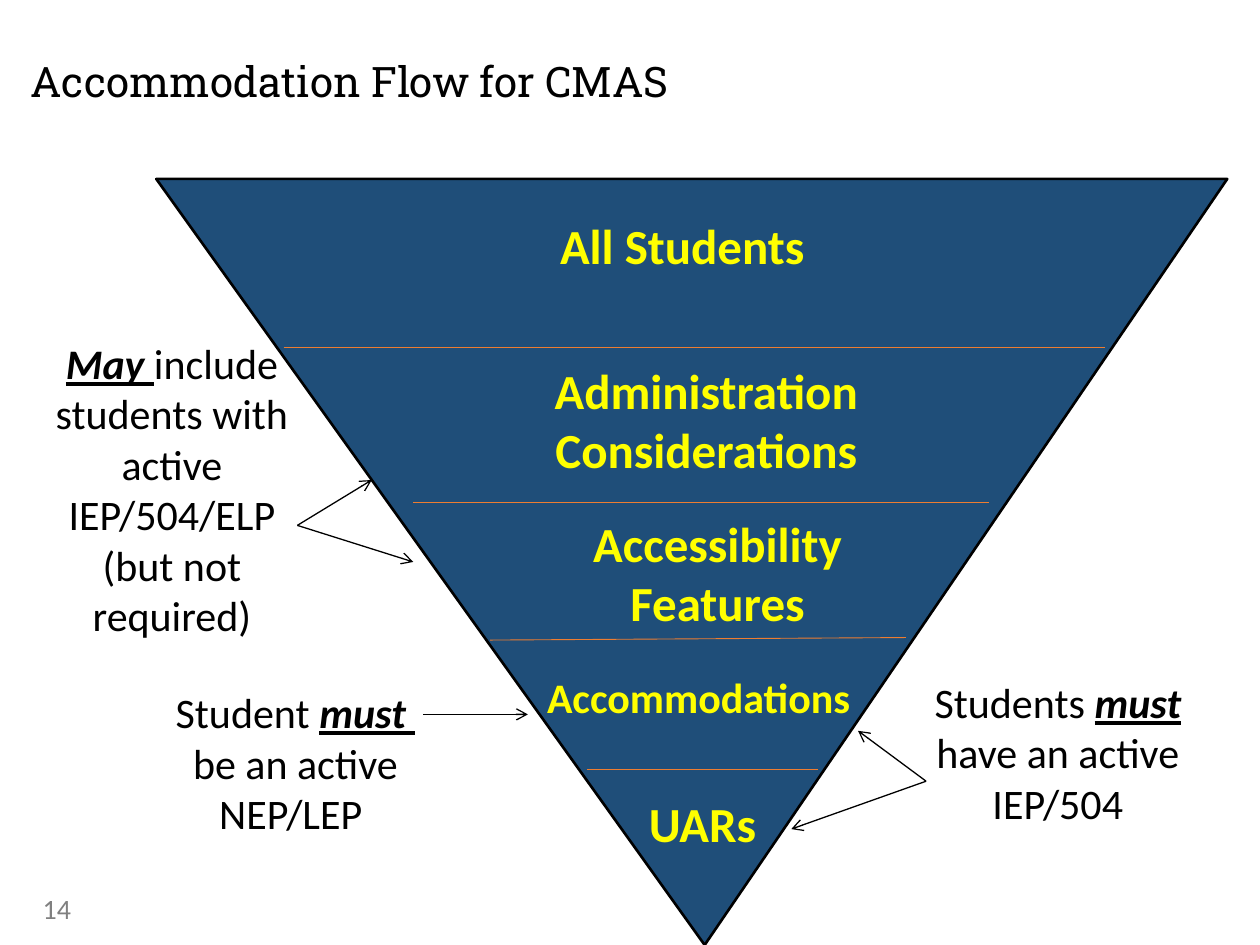
"""Build the slide on accommodation flow as an inverted triangle."""
from lxml.etree import SubElement
from pptx import Presentation
from pptx.dml.color import RGBColor as RGB
from pptx.enum.shapes import MSO_CONNECTOR as Link, MSO_SHAPE as Shape
from pptx.enum.text import MSO_ANCHOR as Anchor, PP_ALIGN as Align
from pptx.oxml.ns import qn
from pptx.util import Inches, Pt

HUES = {"ink": "000000", "navy": "1F4E79", "gold": "FFFF00",
        "rule": "ED7D31", "gray": "808080"}


def write(frame, runs, size, hue, align=Align.CENTER, font="Calibri", bold=None):
    para = frame.paragraphs[0]
    para.alignment = align
    for text, strong in runs:
        run = para.add_run()
        run.text = text
        run.font.name = font
        run.font.size = Pt(size)
        run.font.color.rgb = RGB.from_string(HUES[hue])
        run.font.bold = strong or bold
        if strong:
            run.font.italic = run.font.underline = True
    return para


def draw(start, end, hue, width):
    line = slide.shapes.add_connector(Link.STRAIGHT, *map(Inches, start + end))
    line.line.color.rgb = RGB.from_string(HUES[hue])
    line.line.width = Pt(width)
    SubElement(line._element.spPr, qn("a:effectLst"))
    return line


deck = Presentation()
deck.slide_width, deck.slide_height = Inches(10), Inches(7.5)
slide = deck.slides.add_slide(deck.slide_layouts[5])

title = slide.shapes.title
title.left, title.top = Inches(0.24), Inches(0.34)
title.width, title.height = Inches(9.51), Inches(0.65)
frame = title.text_frame
frame.margin_left = frame.margin_right = frame.margin_top = frame.margin_bottom = 0
frame.vertical_anchor = Anchor.MIDDLE
head = write(frame, [("Accommodation Flow for CMAS", False)], 24, "ink",
             Align.LEFT, "Roboto Slab")
head.line_spacing = 0.9

cone = slide.shapes.add_shape(Shape.ISOSCELES_TRIANGLE, Inches(1.24), Inches(1.42),
                              Inches(8.5), Inches(6.08))
cone.adjustments[0] = 0.488
cone.rotation = 180
cone.shadow.inherit = False
cone.fill.solid()
cone.fill.fore_color.rgb = RGB.from_string(HUES["navy"])
cone.line.color.rgb = RGB.from_string(HUES["ink"])
cone.line.width = Pt(1.5)

notes = [
    (0.26, 2.63, 2.52, [("May ", True), ("include students with active "
                                         "IEP/504/ELP (but not required)", False)]),
    (1.24, 5.4, 1.31, [("Student ", False), ("must ", True),
                       (" be an active NEP/LEP ", False)]),
    (7.29, 5.32, 1.31, [("Students ", False), ("must ", True),
                        ("have an active IEP/504", False)]),
]
tiers = [
    (4.33, 1.66, 2.17, 0.57, "All Students", 28),
    (4.19, 2.81, 2.83, 1.04, "Administration Considerations", 28),
    (4.42, 4.03, 2.55, 1.04, "Accessibility Features", 28),
    (4.09, 5.28, 2.91, 0.5, "Accommodations", 24),
    (4.49, 6.25, 2.17, 0.57, "UARs", 28),
]
boxes = [((x, y, 2.21, h), runs, 24, "ink", Align.CENTER, False)
         for x, y, h, runs in notes]
boxes += [((x, y, w, h), [(text, False)], size, "gold", Align.CENTER, True)
          for x, y, w, h, text, size in tiers]
boxes.append(((0.24, 7.03, 2.25, 0.4), [("14", False)], 16, "gray", Align.LEFT, False))
for place, runs, size, hue, align, bold in boxes:
    box = slide.shapes.add_textbox(*map(Inches, place))
    box.text_frame.word_wrap = True
    write(box.text_frame, runs, size, hue, align, bold=bold)

for start, end in [((2.25, 2.76), (8.77, 2.76)), ((3.28, 3.99), (7.85, 3.99)),
                   ((3.89, 5.08), (7.19, 5.06)), ((4.66, 6.11), (6.49, 6.11))]:
    draw(start, end, "rule", 0.5)

for start, end in [((3.36, 5.67), (4.19, 5.67)), ((2.36, 4.17), (3.28, 4.46)),
                   ((2.36, 4.17), (2.95, 3.81)), ((7.35, 6.2), (6.28, 6.58)),
                   ((7.35, 6.2), (6.81, 5.8))]:
    arrow = draw(start, end, "ink", 0.75)
    SubElement(arrow.line._get_or_add_ln(), qn("a:tailEnd"), type="arrow")

deck.save("out.pptx")
